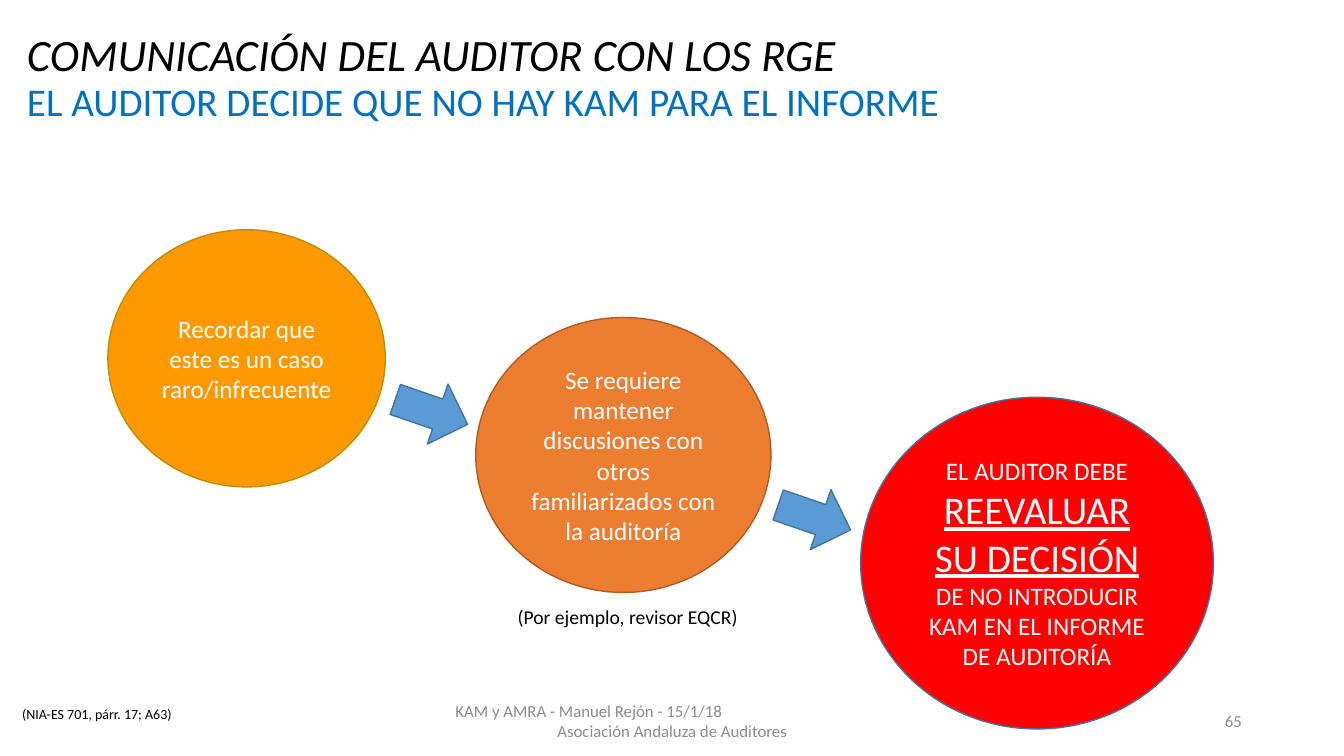
from pptx import Presentation
from pptx.dml.color import RGBColor
from pptx.enum.shapes import MSO_SHAPE
from pptx.enum.text import MSO_ANCHOR, PP_ALIGN
from pptx.util import Cm, Pt

BLACK = RGBColor(0x00, 0x00, 0x00)
WHITE = RGBColor(0xFF, 0xFF, 0xFF)
GREY = RGBColor(0x8C, 0x8C, 0x8C)
BLUE = RGBColor(0x00, 0x70, 0xC0)
SKY = RGBColor(0x5B, 0x9B, 0xD5)
NAVY = RGBColor(0x43, 0x73, 0x9E)
AMBER = RGBColor(0xFF, 0x99, 0x00)
OCHRE = RGBColor(0xBD, 0x8E, 0x00)
ORANGE = RGBColor(0xED, 0x7D, 0x31)
BROWN = RGBColor(0xAF, 0x5C, 0x24)
RED = RGBColor(0xFF, 0x00, 0x00)
LEFT, MID, RIGHT = PP_ALIGN.LEFT, PP_ALIGN.CENTER, PP_ALIGN.RIGHT
TOP, CENTER = MSO_ANCHOR.TOP, MSO_ANCHOR.MIDDLE

deck = Presentation()
deck.slide_width, deck.slide_height = Cm(33.87), Cm(19.05)
slide = deck.slides.add_slide(deck.slide_layouts[6])


def write(text, para, size=18, color=WHITE, align=MID, italic=False, under=False):
    para.alignment = align
    run = para.add_run()
    run.text = text
    font = run.font
    font.name, font.size, font.color.rgb = "Calibri", Pt(size), color
    font.italic, font.underline = italic, under


def draw(kind, place, fill, edge):
    shape = slide.shapes.add_shape(kind, *map(Cm, place))
    shape.shadow.inherit = False
    shape.fill.solid()
    shape.fill.fore_color.rgb = fill
    shape.line.color.rgb = edge
    shape.line.width = Pt(1)
    return shape


# Circles, each with its runs of text
circles = [
    ((2.72, 5.79, 6.99, 6.48), AMBER, OCHRE,
     [("Recordar que este es un caso raro/infrecuente", {})]),
    ((11.99, 8, 7.44, 6.93), ORANGE, BROWN,
     [("Se requiere mantener discusiones con otros familiarizados con la auditoría", {})]),
    ((21.69, 10.01, 8.89, 8.36), RED, NAVY,
     [("EL AUDITOR DEBE ", {}),
      ("REEVALUAR SU DECISIÓN ", {"size": 28, "under": True}),
      ("DE NO INTRODUCIR KAM EN EL INFORME DE AUDITORÍA", {})]),
]
for place, fill, edge, runs in circles:
    frame = draw(MSO_SHAPE.OVAL, place, fill, edge).text_frame
    frame.word_wrap = True
    frame.vertical_anchor = CENTER
    for text, style in runs:
        write(text, frame.paragraphs[0], **style)

# Arrows between the circles
for left, top in [(9.91, 9.58), (19.56, 12.24)]:
    arrow = draw(MSO_SHAPE.RIGHT_ARROW, (left, top, 1.93, 1.6), SKY, NAVY)
    arrow.rotation = 19

# Titles, notes and footer: place, anchor, paragraphs
foot = {"size": 12, "color": GREY}
boxes = [
    ((0.43, 0.69, 31.09, 3.94), TOP,
     [("COMUNICACIÓN DEL AUDITOR CON LOS RGE",
       {"size": 32, "color": BLACK, "align": LEFT, "italic": True})]),
    ((0.43, 1.83, 27.69, 1.45), TOP,
     [("EL AUDITOR DECIDE QUE NO HAY KAM PARA EL INFORME",
       {"size": 28, "color": BLUE, "align": LEFT})]),
    ((11.86, 15.04, 7.92, 1.02), CENTER,
     [("(Por ejemplo, revisor EQCR)", {"size": 14, "color": BLACK})]),
    ((-0.99, 17.65, 6.86, 0.69), TOP,
     [("(NIA-ES 701, párr. 17; A63)", {"size": 10, "color": BLACK})]),
    ((11.23, 17.65, 11.43, 1.02), CENTER,
     [("KAM y AMRA - Manuel Rejón - 15/1/18", {**foot, "align": LEFT}),
      ("Asociación Andaluza de Auditores", foot)]),
    ((23.93, 17.65, 7.62, 1.02), CENTER, [("65", {**foot, "align": RIGHT})]),
]
for place, anchor, lines in boxes:
    frame = slide.shapes.add_textbox(*map(Cm, place)).text_frame
    frame.word_wrap = True
    frame.vertical_anchor = anchor
    for row, (text, style) in enumerate(lines):
        para = frame.add_paragraph() if row else frame.paragraphs[0]
        if style["size"] == 32:
            para.line_spacing = 0.9
        write(text, para, **style)

deck.save("out.pptx")
